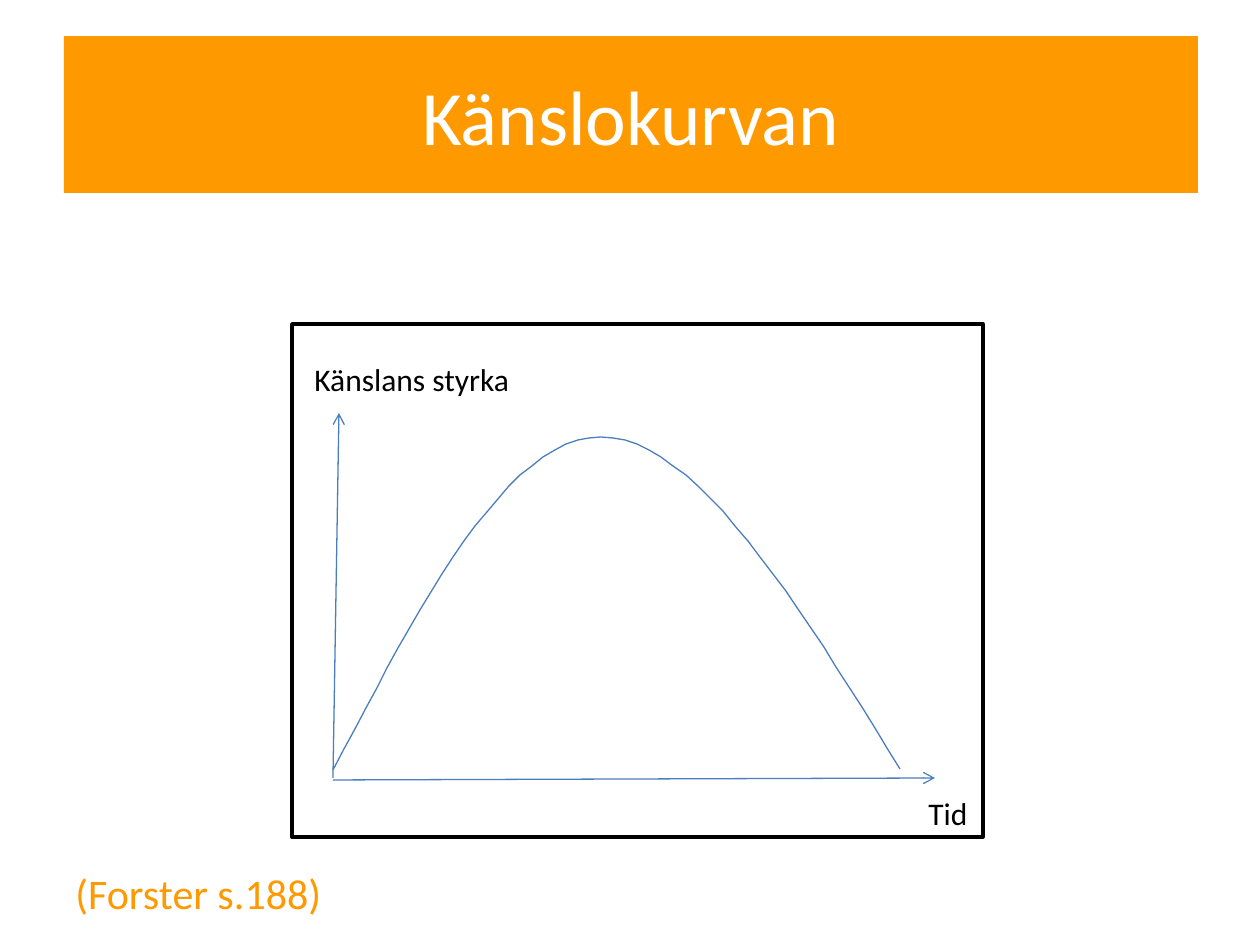
from lxml import etree
from pptx import Presentation
from pptx import util as u
from pptx.dml.color import RGBColor
from pptx.enum import shapes, text
from pptx.oxml.ns import qn

SCALE = 914400 / 126
ORANGE, BLUE, BLACK, WHITE = "FF9900", "4B7EBC", "000000", "FFFFFF"
STEPS = 24


def px(n):
    return u.Emu(round(n * SCALE))


def color(code):
    return RGBColor.from_string(code)


def stroke(line, code, width):
    line.color.rgb = color(code)
    line.width = u.Pt(width)


def put(frame, words, size, code, align=None, **form):
    for name, value in form.items():
        setattr(frame, name, value)
    para = frame.paragraphs[0]
    para.alignment = align
    run = para.add_run()
    run.text = words
    font = {"name": "Calibri", "size": u.Pt(size)}
    for name, value in font.items():
        setattr(run.font, name, value)
    run.font.color.rgb = color(code)


def block(slide, box, fill):
    """Add a plain rectangle without a line."""
    shape = slide.shapes.add_shape(
        shapes.MSO_SHAPE.RECTANGLE, *map(px, box))
    shape.shadow.inherit = False
    shape.fill.solid()
    shape.fill.fore_color.rgb = color(fill)
    shape.line.fill.background()
    return shape


def label(slide, box, words, size, code, wrap=True):
    frame = slide.shapes.add_textbox(*map(px, box)).text_frame
    put(frame, words, size, code, word_wrap=wrap,
        auto_size=text.MSO_AUTO_SIZE.SHAPE_TO_FIT_TEXT)


def axis(slide, start, end):
    """Add a thin line with an open arrowhead at its end."""
    line = slide.shapes.add_connector(
        shapes.MSO_CONNECTOR.STRAIGHT, *map(px, start + end))
    stroke(line.line, BLUE, 0.75)
    tail = etree.SubElement(line.line._get_or_add_ln(), qn("a:tailEnd"))
    tail.set("type", "arrow")
    etree.SubElement(line._element.spPr, qn("a:effectLst"))


def bezier(ends, t):
    weights = ((1 - t) ** 3, 3 * t * (1 - t) ** 2, 3 * t * t * (1 - t), t ** 3)
    return tuple(sum(w * p[i] for w, p in zip(weights, ends)) for i in (0, 1))


def curve(slide, knots):
    """Trace a chain of cubic curves; each third knot lies on the line."""
    points = [bezier(knots[i:i + 4], step / STEPS)
              for i in range(0, len(knots) - 1, 3)
              for step in range(1, STEPS + 1)]
    build = slide.shapes.build_freeform(*knots[0], scale=SCALE)
    build.add_line_segments(points, close=False)
    shape = build.convert_to_shape()
    shape.shadow.inherit = False
    shape.fill.background()
    stroke(shape.line, BLUE, 0.75)


def main():
    deck = Presentation()
    deck.slide_width, deck.slide_height = px(1260), px(945)
    slide = deck.slides.add_slide(deck.slide_layouts[6])

    panel = block(slide, (292, 324, 691, 513), WHITE)
    stroke(panel.line, BLACK, 2)
    axis(slide, (333, 778), (339, 413))
    axis(slide, (333, 780), (935, 778))
    curve(slide, [(333, 770), (420, 604), (507, 437), (601, 437),
                  (696, 437), (798, 603), (900, 769)])
    label(slide, (302, 354, 276, 51), "Känslans styrka", 18, BLACK)
    label(slide, (916, 788, 168, 51), "Tid", 18, BLACK)

    title = block(slide, (64, 36, 1134, 157), ORANGE)
    put(title.text_frame, "Känslokurvan", 44, WHITE, text.PP_ALIGN.CENTER,
        vertical_anchor=text.MSO_ANCHOR.MIDDLE, word_wrap=True)
    label(slide, (63, 861, 282, 63), "(Forster s.188)", 24, ORANGE, False)

    deck.save("out.pptx")


if __name__ == "__main__":
    main()
